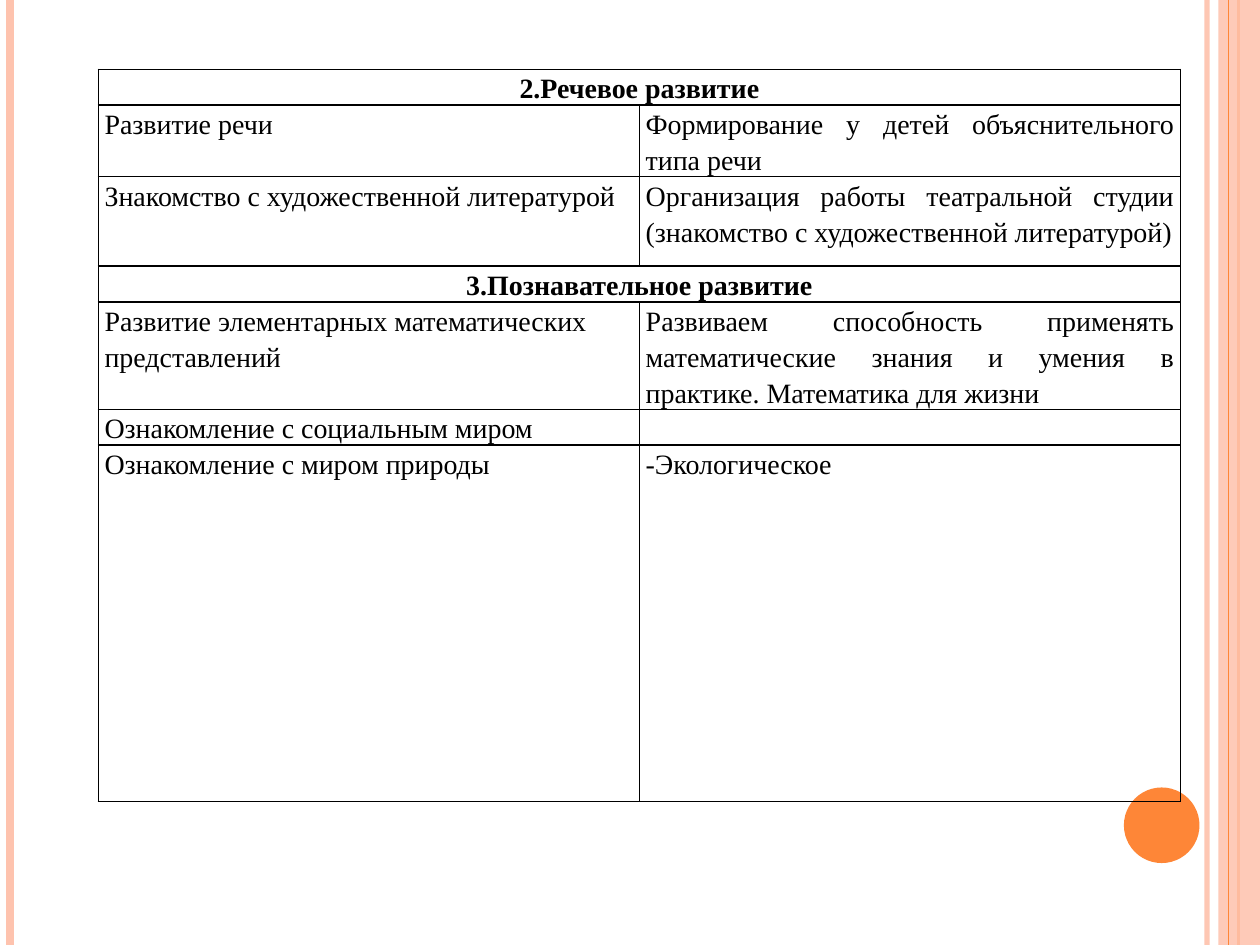
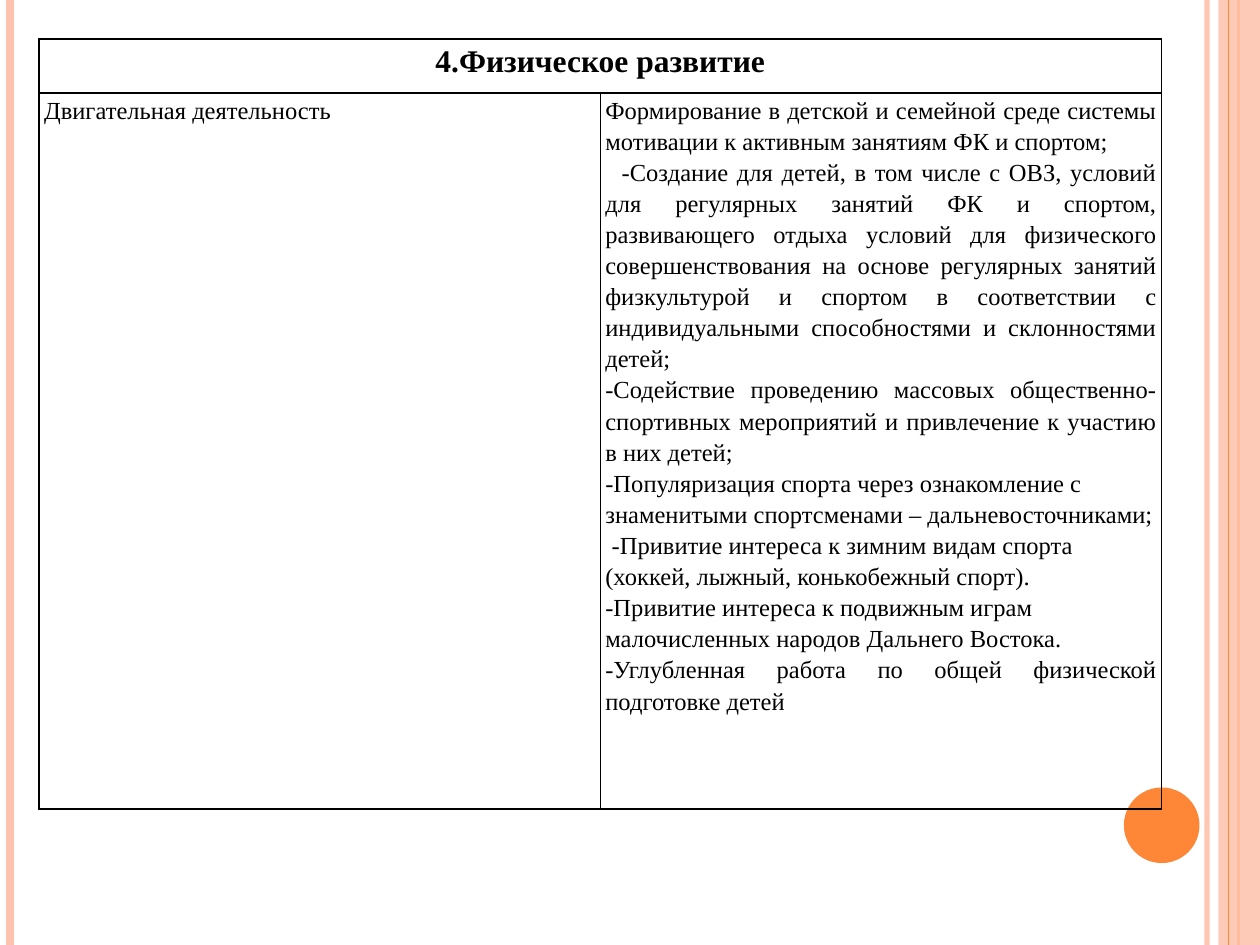
from lxml import etree
from pptx import Presentation
from pptx.dml.color import RGBColor
from pptx.enum.shapes import MSO_CONNECTOR, MSO_SHAPE
from pptx.enum.text import PP_ALIGN
from pptx.oxml.ns import qn
from pptx.util import Inches, Pt

STRAIGHT = MSO_CONNECTOR.STRAIGHT
RECTANGLE, OVAL = MSO_SHAPE.RECTANGLE, MSO_SHAPE.OVAL
LEFT, CENTER, JUSTIFY = PP_ALIGN.LEFT, PP_ALIGN.CENTER, PP_ALIGN.JUSTIFY
FONT = "Times New Roman"
COLORS = {"peach": "FEC3AE", "orange": "FE8637", "black": "000000"}


def set_opacity(shape, percent):
    for color in shape.element.iter(qn("a:srgbClr")):
        etree.SubElement(color, qn("a:alpha")).set("val", str(percent * 1000))


def add_borders(cell):
    properties = cell._tc.get_or_add_tcPr()
    for position, side in enumerate(("lnL", "lnR", "lnT", "lnB")):
        border = etree.Element(qn(f"a:{side}"), w=str(Pt(1)))
        fill = etree.SubElement(border, qn("a:solidFill"))
        etree.SubElement(fill, qn("a:srgbClr"), val=COLORS["black"])
        properties.insert(position, border)


deck = Presentation()
deck.slide_width, deck.slide_height = Inches(10), Inches(7.5)
blank_layout = deck.slide_layouts[6]
pages = [deck.slides.add_slide(blank_layout) for number in range(2)]

decoration = [
    ("line", 9.58, "peach", 3, 93),
    ("line", 0.08, "peach", 4.5, 100),
    ("line", 9.83, "orange", 1.5, 100),
    (RECTANGLE, (9.67, 0, 0.33, 7.5), "peach", 0, 87),
    ("line", 9.75, "orange", 0.75, 100),
    (OVAL, (8.92, 6.25, 0.6, 0.6), "orange", 0, 100),
]
master_shapes = deck.slide_master.shapes.element
for kind, place, color, width, opacity in decoration:
    if kind == "line":
        shape = pages[0].shapes.add_connector(
            STRAIGHT, Inches(place), 0, Inches(place), deck.slide_height)
        shape.line.color.rgb = RGBColor.from_string(COLORS[color])
        shape.line.width = Pt(width)
        etree.SubElement(shape.element.spPr, qn("a:effectLst"))
    else:
        shape = pages[0].shapes.add_shape(kind, *map(Inches, place))
        shape.fill.solid()
        shape.fill.fore_color.rgb = RGBColor.from_string(COLORS[color])
        shape.line.fill.background()
        shape.shadow.inherit = False
    if opacity < 100:
        set_opacity(shape, opacity)
    master_shapes.append(shape.element)

speech_and_cognition = [
    (0.22, "2.Речевое развитие", None),
    (0.47, "Развитие речи",
     [(JUSTIFY, 0, "Формирование у детей объяснительного типа речи")]),
    (0.71, "Знакомство с художественной литературой",
     [(JUSTIFY, 0, "Организация работы театральной студии (знакомство с художественной литературой)")]),
    (0.24, "3.Познавательное развитие", None),
    (0.71, "Развитие элементарных математических представлений",
     [(JUSTIFY, 0, "Развиваем способность применять математические знания и умения в практике. "
                   "Математика для жизни")]),
    (0.24, "Ознакомление с социальным миром", [(LEFT, 0, "")]),
    (2.83, "Ознакомление с миром природы", [(JUSTIFY, 0, "-Экологическое")]),
]
physical_development = [
    (0.43, "4.Физическое развитие", None),
    (5.68, "Двигательная деятельность", [
        (JUSTIFY, 0, "Формирование в детской и семейной среде системы мотивации к активным "
                     "занятиям ФК и спортом;"),
        (JUSTIFY, 0.13, "-Создание для детей, в том числе с ОВЗ, условий для регулярных занятий ФК "
                        "и спортом, развивающего отдыха условий для физического совершенствования "
                        "на основе регулярных занятий физкультурой и спортом в соответствии с "
                        "индивидуальными способностями и склонностями детей;"),
        (JUSTIFY, 0, "-Содействие проведению массовых общественно-спортивных мероприятий и "
                     "привлечение к участию в них детей;"),
        (LEFT, 0, "-Популяризация спорта через ознакомление с знаменитыми спортсменами – "
                  "дальневосточниками;"),
        (LEFT, 0.05, "-Привитие интереса к зимним видам спорта (хоккей, лыжный, конькобежный спорт)."),
        (LEFT, 0, "-Привитие интереса к подвижным играм малочисленных народов Дальнего Востока."),
        (JUSTIFY, 0, "-Углубленная работа по общей физической подготовке детей"),
    ]),
]
tables = [
    (speech_and_cognition, 0.78, 0.55, 8.59, 0.05, 16, 16),
    (physical_development, 0.31, 0.31, 8.91, 0.04, 18, 14),
]

for page, (rows, left, top, width, margin, heading_size, body_size) in zip(pages, tables):
    height = sum(row[0] for row in rows)
    table = page.shapes.add_table(
        len(rows), 2, Inches(left), Inches(top), Inches(width), Inches(height)).table
    table.first_row = table.horz_banding = False
    for row_index, (row_height, topic, content) in enumerate(rows):
        table.rows[row_index].height = Inches(row_height)
        is_heading = content is None
        topic_cell, content_cell = table.rows[row_index].cells
        if is_heading:
            topic_cell.merge(content_cell)
        topic_align = CENTER if is_heading else LEFT
        for cell, lines in ((topic_cell, [(topic_align, 0, topic)]), (content_cell, content or [])):
            cell.margin_left = cell.margin_right = Inches(margin)
            cell.margin_top = cell.margin_bottom = 0
            cell.fill.background()
            add_borders(cell)
            frame = cell.text_frame
            for line_index, (alignment, indent, text) in enumerate(lines):
                para = frame.add_paragraph() if line_index else frame.paragraphs[0]
                para.text = text
                para.alignment = alignment
                para.line_spacing = 1.15
                para.font.name = FONT
                para.font.size = Pt(heading_size if is_heading else body_size)
                para.font.bold = is_heading
                para.font.color.rgb = RGBColor.from_string(COLORS["black"])
                if indent:
                    para._p.get_or_add_pPr().set("indent", str(Inches(indent)))

deck.save("out.pptx")
